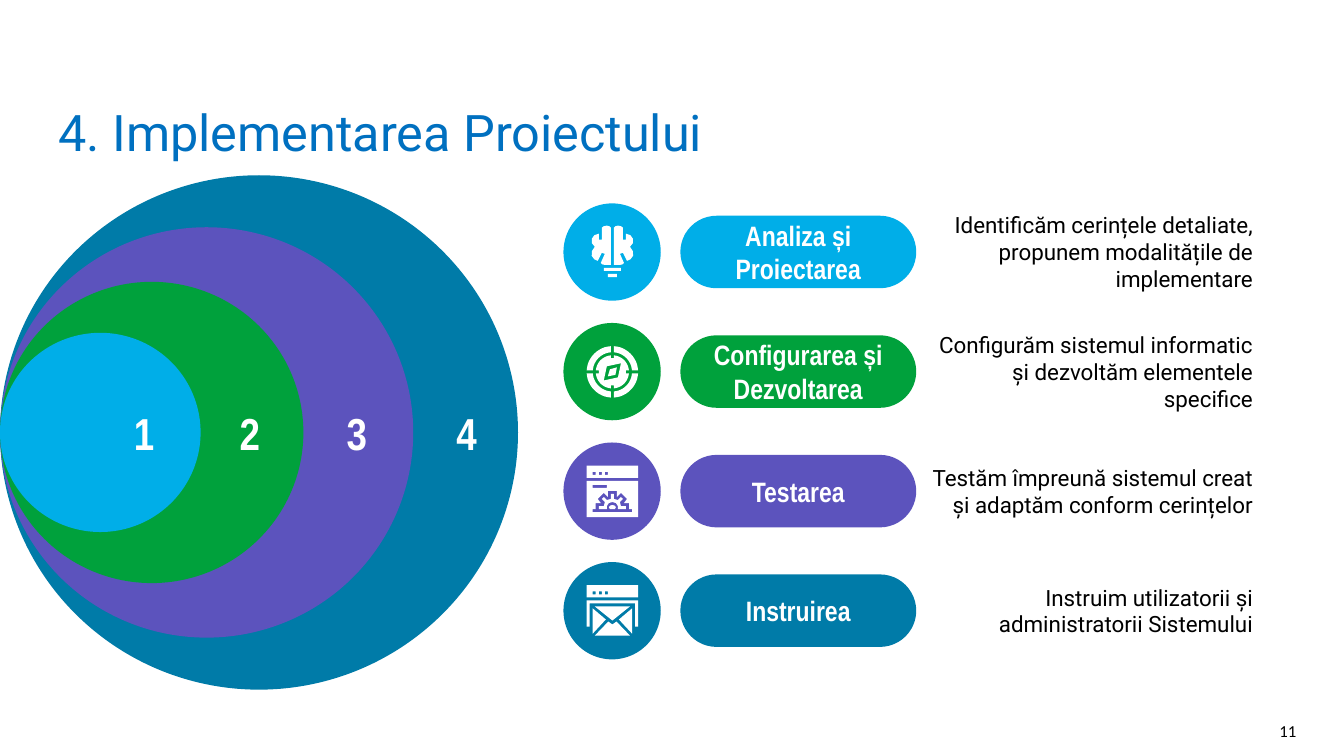
"""Build the project implementation slide with nested rings and four steps."""
import math

import pptx
import pptx.dml.color
import pptx.enum.shapes
import pptx.enum.text
import pptx.util

Pt = pptx.util.Pt
SHAPE = pptx.enum.shapes.MSO_SHAPE
ALIGN = pptx.enum.text.PP_ALIGN
ANCHOR = pptx.enum.text.MSO_ANCHOR

COLORS = {
    "sky": "00AEE8",
    "green": "00A13C",
    "violet": "5C53BD",
    "teal": "007BA8",
    "title": "0070C0",
    "white": "FFFFFF",
    "black": "000000",
}
RINGS = [
    ("4", "teal", 370, 295.2),
    ("3", "violet", 295.2, 216.7),
    ("2", "green", 216.7, 140.4),
    ("1", "sky", 143.3, 64.8),
]
STEPS = [
    ("sky", "Analiza și Proiectarea", 643.7,
     "Identificăm cerințele detaliate, propunem modalitățile de implementare"),
    ("green", "Configurarea și Dezvoltarea", 654.5,
     "Configurăm sistemul informatic și dezvoltăm elementele specifice"),
    ("violet", "Testarea", 643.7,
     "Testăm împreună sistemul creat și adaptăm conform cerințelor"),
    ("teal", "Instruirea", 643.7,
     "Instruim utilizatorii și administratorii Sistemului"),
]
MID = 48.5
GRAIN = 10


def color(name):
    """Return the named colour."""
    return pptx.dml.color.RGBColor.from_string(COLORS[name])


def write(shape, text, size, face, tint, align, bold=False, pad=9.36,
          anchor=ANCHOR.MIDDLE):
    """Put one styled paragraph into a shape."""
    frame = shape.text_frame
    frame.word_wrap = True
    frame.vertical_anchor = anchor
    frame.margin_left = frame.margin_right = Pt(pad)
    frame.margin_top = frame.margin_bottom = Pt(pad)
    para = frame.paragraphs[0]
    para.text = text
    para.alignment = align
    para.font.size = Pt(size)
    para.font.name = face
    para.font.bold = bold
    para.font.color.rgb = color(tint)


def label(slide, box, *style, **extra):
    """Add a text box with one paragraph."""
    write(slide.shapes.add_textbox(*map(Pt, box)), *style, **extra)


def paint(shape, tint):
    """Give a shape a plain fill without line or shadow."""
    shape.shadow.inherit = False
    shape.fill.solid()
    shape.fill.fore_color.rgb = color(tint)
    shape.line.fill.background()


def solid(slide, kind, box, tint):
    """Add a filled preset shape."""
    shape = slide.shapes.add_shape(kind, *map(Pt, box))
    paint(shape, tint)
    return shape


def flip(points):
    """Mirror points about the icon's middle."""
    return [(2 * MID - x, y) for x, y in reversed(points)]


def whole(half):
    """Close a half outline with its mirror."""
    return half + flip(half)


def block(x, y, width, height):
    """Return the corners of a rectangle."""
    return [(x, y), (x + width, y), (x + width, y + height), (x, y + height)]


def arc(radius):
    """Return a quarter arc that leaves a gap at each axis."""
    gap = math.asin(1.5 / radius)
    sweep = math.pi / 2 - 2 * gap
    angles = [gap + sweep * i / 12 for i in range(13)]
    return [(radius * math.cos(a), radius * math.sin(a)) for a in angles]


def turn(points, count):
    """Turn points by quarters and move them to the icon's middle."""
    for _ in range(count):
        points = [(-y, x) for x, y in points]
    return [(MID + x, MID + y) for x, y in points]


def brain():
    """Return the outlines of the brain bulb."""
    lobe = [(43, 22), (40, 22.6), (38, 24), (38, 36), (35, 36), (35, 30),
            (30.6, 31.5), (28.1, 35), (28.1, 39.3), (31, 43), (28.1, 47.5),
            (28, 52), (30.6, 55.5), (34, 57), (38, 49), (41, 50), (37, 59),
            (38.5, 60.5), (41, 61), (47, 61), (47, 24), (45.5, 22.6)]
    return [lobe, flip(lobe), block(40, 64, 17, 3), block(44, 70, 9, 3)]


def compass():
    """Return the outlines of the compass."""
    band = arc(25.5) + arc(19.5)[::-1]
    part = [(13.5, 1.5)] + arc(16.5) + [(1.5, 13.5)]
    disc = [point for i in range(4) for point in turn(part, i)]
    hole = [(57, 40), (54, 54), (40, 57), (43, 43)]
    gem = [(53, 44), (51.5, 51.5), (44, 53), (46, 46)]
    return [turn(band, i) for i in range(4)] + [disc, hole, gem]


def header():
    """Return the outlines of a window's top bar."""
    return [block(23, 23, 51, 12)] + [block(x, 29, 3, 3) for x in (29, 35, 41)]


def gear():
    """Return the outlines of the window with a gear."""
    hole = [(53, 48), (53, 54), (57, 50), (63, 56), (60, 60), (65, 60),
            (65, 66), (68, 66), (68, 69)]
    wheel = [(50, 51), (50, 56), (54, 57), (57, 54), (59, 56), (56, 59),
             (57, 63), (62, 63), (62, 66), (54, 66), (54, 63), (52, 60),
             (48.5, 59)]
    hub = [(48.5, 62), (50.5, 62.5), (52, 64), (51, 66)]
    return header() + [block(23, 38, 51, 36), block(29, 42, 14, 3),
                       whole(hole), whole(wheel), whole(hub)]


def mail():
    """Return the outlines of the window with an envelope."""
    side = [(29, 46), (29, 71), (42, 57)]
    frame = [(26, 41), (26, 64), (23, 64), (23, 38)]
    flap = [(31, 44), (48.5, 58), (66, 44)]
    base = [(48.5, 62), (44.5, 59), (31, 73)]
    return header() + [side, flip(side), flap, whole(base), whole(frame)]


def icon(slide, left, top, loops):
    """Draw outlines as one white freeform."""
    form = None
    for loop in loops:
        dots = [(x * GRAIN, y * GRAIN) for x, y in loop]
        if form is None:
            form = slide.shapes.build_freeform(*dots[0], Pt(0.72) / GRAIN)
        else:
            form.move_to(*dots[0])
        form.add_line_segments(dots[1:])
    paint(form.convert_to_shape(Pt(left), Pt(top)), "white")


def rings(slide):
    """Draw the nested rings and their numbers."""
    for _, tint, width, _ in RINGS:
        height = width * 0.993
        solid(slide, SHAPE.OVAL, (0, 308.9 - height / 2, width, height), tint)
    for digit, _, _, left in RINGS:
        label(slide, (left, 283, 76.3, 51.8), digit, 32, "Arial Narrow",
              "white", ALIGN.CENTER, bold=True)


def step(slide, top, tint, name, left, text, loops):
    """Draw one step with its icon, name and text."""
    label(slide, (left, top + 4.4, 904.3 - left, 60.5), text, 16, "Roboto",
          "black", ALIGN.RIGHT)
    solid(slide, SHAPE.OVAL, (402.5, top, 69.5, 69.5), tint)
    icon(slide, 402.5, top, loops)
    pill = solid(slide, SHAPE.ROUNDED_RECTANGLE,
                 (486, top + 8.8, 168.5, 51.8), tint)
    pill.adjustments[0] = 0.5
    write(pill, name, 20, "Arial Narrow", "white", ALIGN.CENTER, bold=True)


def main():
    """Build and save the slide."""
    deck = pptx.Presentation()
    deck.slide_width, deck.slide_height = Pt(960), Pt(540)
    slide = deck.slides.add_slide(deck.slide_layouts[6])
    label(slide, (702, 500.4, 223.9, 28.8), "11", 12, "Calibri", "black",
          ALIGN.RIGHT, pad=0, anchor=ANCHOR.BOTTOM)
    label(slide, (41.8, 72, 884.9, 62.6), "4. Implementarea Proiectului", 36,
          "Roboto", "title", ALIGN.LEFT, pad=0, anchor=ANCHOR.TOP)
    rings(slide)
    icons = [brain(), compass(), gear(), mail()]
    for i, (data, loops) in enumerate(zip(STEPS, icons)):
        step(slide, 145.3 + 85.4 * i, *data, loops)
    deck.save("out.pptx")


if __name__ == "__main__":
    main()
